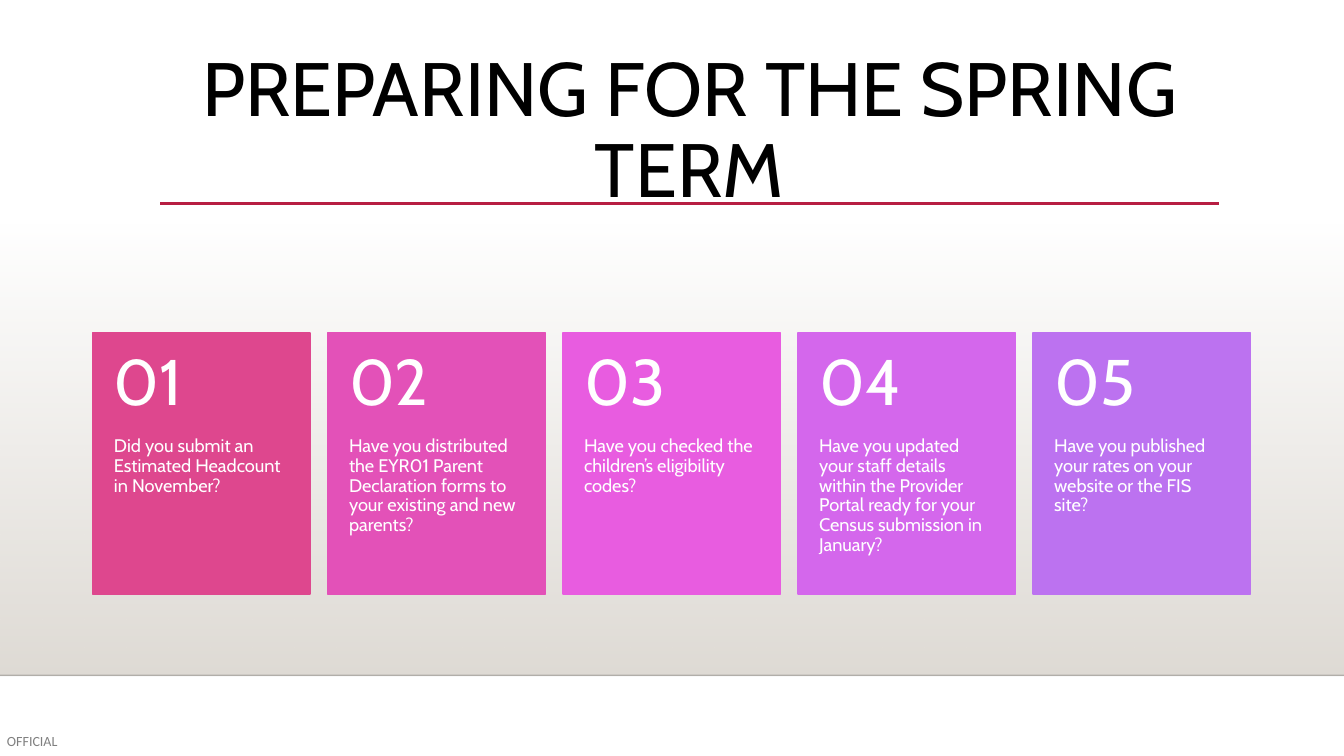
from pptx import Presentation
from pptx.dml.color import RGBColor
from pptx.enum import shapes, text
from pptx.oxml import ns
from pptx.oxml import xmlchemy as xml
from pptx.util import Pt

BLACK = RGBColor(0x00, 0x00, 0x00)
INK = RGBColor(0x00, 0x00, 0x01)
WHITE = RGBColor(0xFF, 0xFF, 0xFF)
STONE = RGBColor(0xDF, 0xDB, 0xD5)
CRIMSON = RGBColor(0xB7, 0x1E, 0x42)
ROSE = RGBColor(0xDE, 0x47, 0x8E)
PINK = RGBColor(0xE3, 0x51, 0xB8)
MAGENTA = RGBColor(0xE8, 0x5C, 0xE0)
ORCHID = RGBColor(0xD4, 0x67, 0xEC)
VIOLET = RGBColor(0xBC, 0x72, 0xF0)

SLIDE_WIDTH, SLIDE_HEIGHT = 960, 540
FLOOR_TOP, FLOOR_BOTTOM = 159.1, 482.4
CARD_LEFT, CARD_TOP, CARD_PITCH = 66.1, 237.6, 167.9
CARD_WIDTH, CARD_HEIGHT, NUMBER_HEIGHT = 155.6, 186.6, 74.7

CARDS = [
    (ROSE, "Did you submit an Estimated Headcount in November?"),
    (PINK, "Have you distributed the EYR01 Parent Declaration forms to "
           "your existing and new parents?"),
    (MAGENTA, "Have you checked the children’s eligibility codes?"),
    (ORCHID, "Have you updated your staff details within the Provider Portal "
             "ready for your Census submission in January?"),
    (VIOLET, "Have you published your rates on your website or the FIS site?"),
]


def apply(target, values):
    for name, value in values.items():
        setattr(target, name, value)


def set_opacity(element, *percents):
    for color, percent in zip(element.iter(ns.qn("a:srgbClr")), percents):
        alpha = xml.OxmlElement("a:alpha")
        alpha.set("val", str(percent * 1000))
        color.append(alpha)


def add_rectangle(page, left, top, width, height):
    rectangle = page.shapes.add_shape(
        shapes.MSO_SHAPE.RECTANGLE, Pt(left), Pt(top), Pt(width), Pt(height))
    rectangle.shadow.inherit = False
    return rectangle


def add_floor(page):
    floor = add_rectangle(
        page, 0, FLOOR_TOP, SLIDE_WIDTH, FLOOR_BOTTOM - FLOOR_TOP)
    floor.line.fill.background()
    floor.fill.gradient()
    floor.fill.gradient_angle = 270
    for stop, position in zip(floor.fill.gradient_stops, (0, 1)):
        stop.color.rgb = STONE
        stop.position = position
    set_opacity(floor.fill._xPr, 0, 100)


def add_rule(page, left, right, top, color, weight, opacity=100):
    rule = page.shapes.add_connector(
        shapes.MSO_CONNECTOR.STRAIGHT, Pt(left), Pt(top), Pt(right), Pt(top))
    rule.line.color.rgb = color
    rule.line.width = Pt(weight)
    properties = rule._element.spPr
    if opacity < 100:
        set_opacity(properties, opacity)
    properties.append(xml.OxmlElement("a:effectLst"))


def add_text(page, words, left, top, width, height, size, color,
             font="Cabin", margins=(0, 0, 0, 0), wrap=True,
             anchor=text.MSO_ANCHOR.TOP, align=text.PP_ALIGN.LEFT,
             spacing=0.9):
    box = page.shapes.add_textbox(Pt(left), Pt(top), Pt(width), Pt(height))
    frame = box.text_frame
    sides = ("margin_left", "margin_top", "margin_right", "margin_bottom")
    apply(frame, dict(zip(sides, map(Pt, margins))))
    apply(frame, {"word_wrap": wrap, "vertical_anchor": anchor})
    para = frame.paragraphs[0]
    apply(para, {"alignment": align, "line_spacing": spacing})
    span = para.add_run()
    span.text = words
    apply(span.font, {"name": font, "size": Pt(size)})
    span.font.color.rgb = color
    return box


def add_card(page, index, color, question):
    left = CARD_LEFT + index * CARD_PITCH
    card = add_rectangle(page, left, CARD_TOP, CARD_WIDTH, CARD_HEIGHT)
    card.fill.solid()
    card.fill.fore_color.rgb = color
    card.line.color.rgb = color
    card.line.width = Pt(1.25)
    add_text(page, question, left, CARD_TOP + NUMBER_HEIGHT, CARD_WIDTH,
             CARD_HEIGHT - NUMBER_HEIGHT, 13, WHITE,
             margins=(15.3, 0, 15.3, 26))
    add_text(page, f"{index + 1:02}", left, CARD_TOP, CARD_WIDTH,
             NUMBER_HEIGHT, 46, WHITE, margins=(15.3, 13, 15.3, 13),
             anchor=text.MSO_ANCHOR.MIDDLE)


def main():
    deck = Presentation()
    apply(deck, {"slide_width": Pt(SLIDE_WIDTH),
                 "slide_height": Pt(SLIDE_HEIGHT)})
    page = deck.slides.add_slide(deck.slide_layouts[6])
    page.background.fill.solid()
    page.background.fill.fore_color.rgb = WHITE
    add_floor(page)
    add_rule(page, 0, SLIDE_WIDTH, FLOOR_BOTTOM, INK, 1, opacity=20)
    marking = add_text(page, "OFFICIAL", 5, 522.9, 38, 12.2, 10, BLACK,
                       font="Calibri", wrap=False, spacing=1.0)
    set_opacity(marking._element, 50)
    add_rule(page, 114.5, 870.9, 145.2, CRIMSON, 2.5)
    add_text(page, "PREPARING FOR THE SPRING TERM", 114.5, 53.3, 756, 82.8,
             54, BLACK, margins=(7.2, 3.6, 7.2, 3.6),
             anchor=text.MSO_ANCHOR.MIDDLE, align=text.PP_ALIGN.CENTER)
    for index, (color, question) in enumerate(CARDS):
        add_card(page, index, color, question)
    deck.save("out.pptx")


if __name__ == "__main__":
    main()
